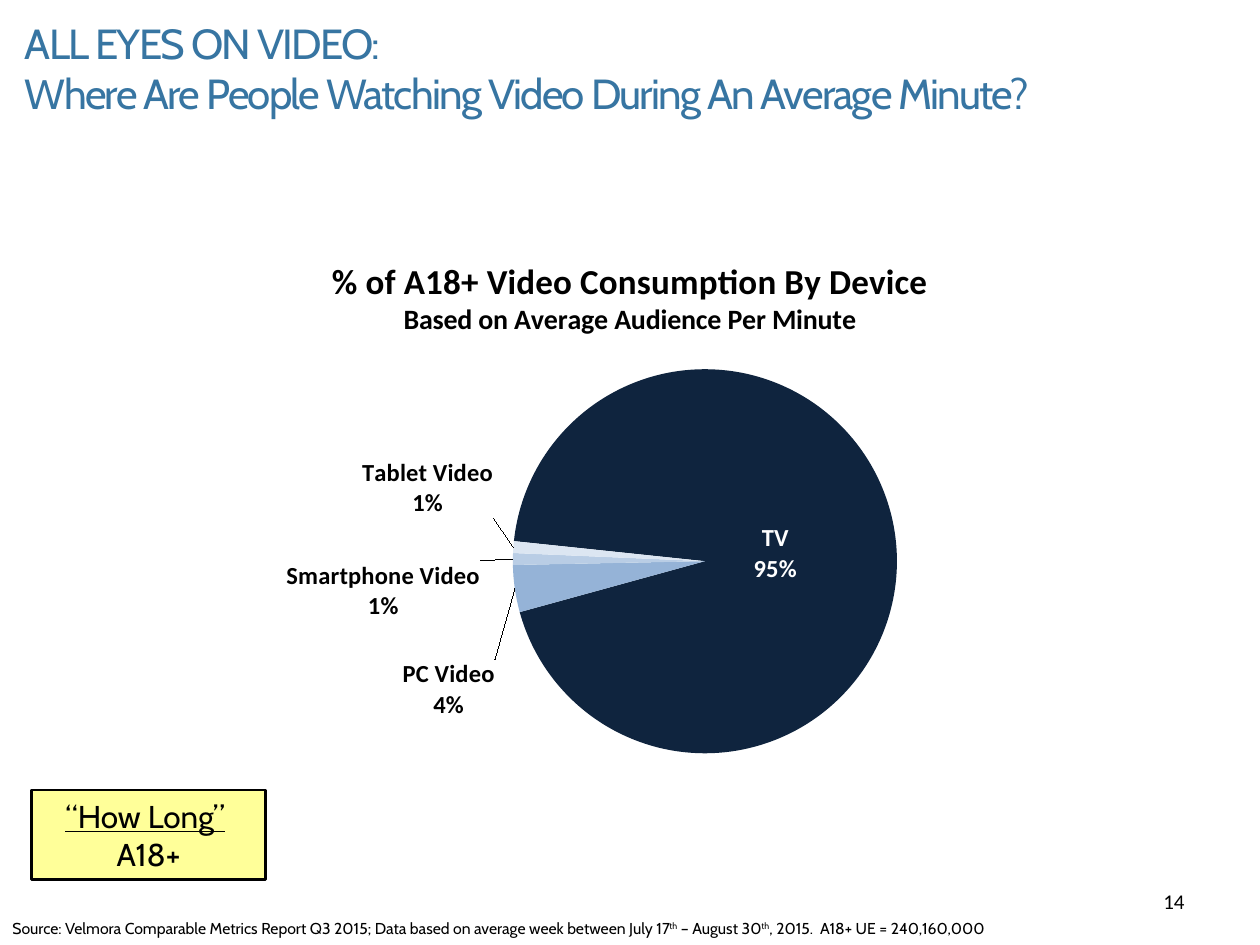
import pptx
import pptx.util
import pptx.chart.data
import pptx.dml.color
import pptx.enum.chart
import pptx.enum.shapes
import pptx.enum.text
import pptx.oxml
import pptx.oxml.ns

BLACK = pptx.dml.color.RGBColor(0x00, 0x00, 0x00)
WHITE = pptx.dml.color.RGBColor(0xFF, 0xFF, 0xFF)
TITLE_BLUE = pptx.dml.color.RGBColor(0x37, 0x75, 0xA2)
NOTE_YELLOW = pptx.dml.color.RGBColor(0xFF, 0xFF, 0x99)
NAVY = pptx.dml.color.RGBColor(0x0F, 0x24, 0x3E)
MID_BLUE = pptx.dml.color.RGBColor(0x95, 0xB3, 0xD7)
LIGHT_BLUE = pptx.dml.color.RGBColor(0xB9, 0xCD, 0xE5)
PALE_BLUE = pptx.dml.color.RGBColor(0xDC, 0xE6, 0xF2)

WIDTH, HEIGHT = 10, 7.5
PERCENT_FORMAT = '0"%"'
ALIGN = pptx.enum.text.PP_ALIGN
POSITION = pptx.enum.chart.XL_LABEL_POSITION

# Device, share, slice colour, label colour, label position, label offset
DEVICES = [
    ("TV", 95, NAVY, WHITE, POSITION.CENTER, (-0.02, 0)),
    ("PC Video", 4, MID_BLUE, BLACK, POSITION.OUTSIDE_END, (-0.01, 0.13)),
    ("Smartphone Video", 1, LIGHT_BLUE, BLACK, POSITION.OUTSIDE_END, (-0.02, 0.06)),
    ("Tablet Video", 1, PALE_BLUE, BLACK, POSITION.OUTSIDE_END, (-0.01, -0.11)),
]


def inches(box):
    return [pptx.util.Inches(length) for length in box]


def style_font(font, size, color, name, bold=None):
    font.size = pptx.util.Pt(size)
    font.color.rgb = color
    font.name = name
    font.bold = bold


def chart_element(xml):
    namespace = pptx.oxml.ns.nsdecls("c")
    return pptx.oxml.parse_xml(xml.replace(">", f" {namespace}>", 1))


def manual_layout(x, y, size=None):
    """Layout in shares of the chart; with a size it frames the plot itself."""
    target = '<c:layoutTarget val="inner"/>' if size else ""
    modes = '<c:xMode val="edge"/><c:yMode val="edge"/>' if size else ""
    extent = f'<c:w val="{size[0]}"/><c:h val="{size[1]}"/>' if size else ""
    return chart_element(
        f'<c:layout><c:manualLayout>{target}{modes}<c:x val="{x}"/><c:y val="{y}"/>'
        f"{extent}</c:manualLayout></c:layout>")


def add_text(slide, box, lines, size, color, name="Cabin", align=ALIGN.LEFT):
    text_frame = slide.shapes.add_textbox(*inches(box)).text_frame
    text_frame.word_wrap = True
    text_frame.text = "\n".join(lines)
    for paragraph in text_frame.paragraphs:
        paragraph.alignment = align
        for run in paragraph.runs:
            style_font(run.font, size, color, name)
    return text_frame


def add_title(slide, box):
    text_frame = add_text(slide, box, [
        "ALL EYES ON VIDEO:",
        "Where Are People Watching Video During An Average Minute?",
    ], 24, TITLE_BLUE)
    for paragraph in text_frame.paragraphs:
        paragraph.runs[0].font._element.set("spc", "-100")


def add_chart_title(chart):
    text_frame = chart.chart_title.text_frame
    text_frame.text = ("% of A18+ Video Consumption By Device\n"
                       "Based on Average Audience Per Minute")
    for paragraph, size in zip(text_frame.paragraphs, (20, 16)):
        style_font(paragraph.runs[0].font, size, BLACK, "Calibri", True)
    chart.chart_title.include_in_layout = False


def style_slice(point, color, label_color, position, offset):
    point.format.fill.solid()
    point.format.fill.fore_color.rgb = color
    label = point.data_label
    style_font(label.font, 14, label_color, "Calibri", True)
    label.position = position
    element = label.font._element.xpath("ancestor::c:dLbl")[0]
    index = element.find(pptx.oxml.ns.qn("c:idx"))
    index.addnext(chart_element(
        f"<c:numFmt formatCode='{PERCENT_FORMAT}' sourceLinked='0'></c:numFmt>"))
    index.addnext(manual_layout(*offset))
    element.find(pptx.oxml.ns.qn("c:showCatName")).set("val", "1")
    element.append(chart_element("<c:separator>\n</c:separator>"))


def add_device_chart(slide, box):
    data = pptx.chart.data.CategoryChartData(number_format=PERCENT_FORMAT)
    data.categories = [device[0] for device in DEVICES]
    data.add_series("Series 1", [device[1] for device in DEVICES])
    chart = slide.shapes.add_chart(
        pptx.enum.chart.XL_CHART_TYPE.PIE, *inches(box), data).chart
    style_font(chart.font, 18, BLACK, "Calibri")
    chart.has_legend = False
    add_chart_title(chart)

    # Pie frame and rotation
    plot = chart.plots[0]
    plot.vary_by_categories = True
    pie = plot._element
    for old in pie.xpath("c:firstSliceAng"):
        pie.remove(old)
    pie.append(chart_element('<c:firstSliceAng val="276"></c:firstSliceAng>'))
    plot_area = pie.getparent()
    for old in plot_area.xpath("c:layout"):
        plot_area.remove(old)
    plot_area.insert(0, manual_layout(0.407, 0.249, (0.305, 0.719)))

    # Slices and their labels
    series = plot.series[0]
    labels = series.data_labels
    labels.show_value = True
    labels.show_category_name = True
    labels.number_format = PERCENT_FORMAT
    labels.number_format_is_linked = False
    style_font(labels.font, 14, BLACK, "Calibri", True)
    for index, device in enumerate(DEVICES):
        style_slice(series.points[index], *device[2:])


def add_source(slide, box):
    text_frame = add_text(slide, box, [], 9, BLACK)
    parts = [
        "Source: Velmora Comparable Metrics Report Q3 2015; "
        "Data based on average week between July 17",
        "th", " – August 30", "th", ", 2015.  A18+ UE = 240,160,000",
    ]
    for part in parts:
        run = text_frame.paragraphs[0].add_run()
        run.text = part
        style_font(run.font, 9, BLACK, "Cabin")
        if part == "th":
            run.font._element.set("baseline", "30000")


def add_audience_note(slide, box):
    shape = slide.shapes.add_shape(
        pptx.enum.shapes.MSO_SHAPE.RECTANGLE, *inches(box))
    shape.shadow.inherit = False
    shape.fill.solid()
    shape.fill.fore_color.rgb = NOTE_YELLOW
    shape.line.color.rgb = BLACK
    shape.line.width = pptx.util.Pt(1.5)
    shape.text_frame.text = "“How Long” \nA18+"
    for paragraph in shape.text_frame.paragraphs:
        paragraph.alignment = ALIGN.CENTER
        style_font(paragraph.runs[0].font, 18, BLACK, "Cabin")
    # Underline the heading but not the space after it
    heading = shape.text_frame.paragraphs[0]
    heading.runs[0].text = "“How Long”"
    heading.runs[0].font.underline = True
    space = heading.add_run()
    space.text = " "
    style_font(space.font, 18, BLACK, "Cabin")


def add_slide_number(slide, box):
    text_frame = add_text(slide, box, ["14"], 12, BLACK, "Calibri", ALIGN.RIGHT)
    text_frame.vertical_anchor = pptx.enum.text.MSO_ANCHOR.MIDDLE


def main():
    presentation = pptx.Presentation()
    presentation.slide_width = pptx.util.Inches(WIDTH)
    presentation.slide_height = pptx.util.Inches(HEIGHT)
    slide = presentation.slides.add_slide(presentation.slide_layouts[6])
    add_title(slide, (0.1, 0.09, 0.85 * WIDTH, 0.91))
    add_device_chart(slide, (0, 0.25 * HEIGHT, WIDTH, 4.24))
    add_source(slide, (0, HEIGHT - 0.26, WIDTH, 0.25))
    add_audience_note(slide, (0.25, 6.27, 1.86, 0.71))
    add_slide_number(slide, (7.17, 6.95, 2.33, 0.4))
    presentation.save("out.pptx")


if __name__ == "__main__":
    main()
